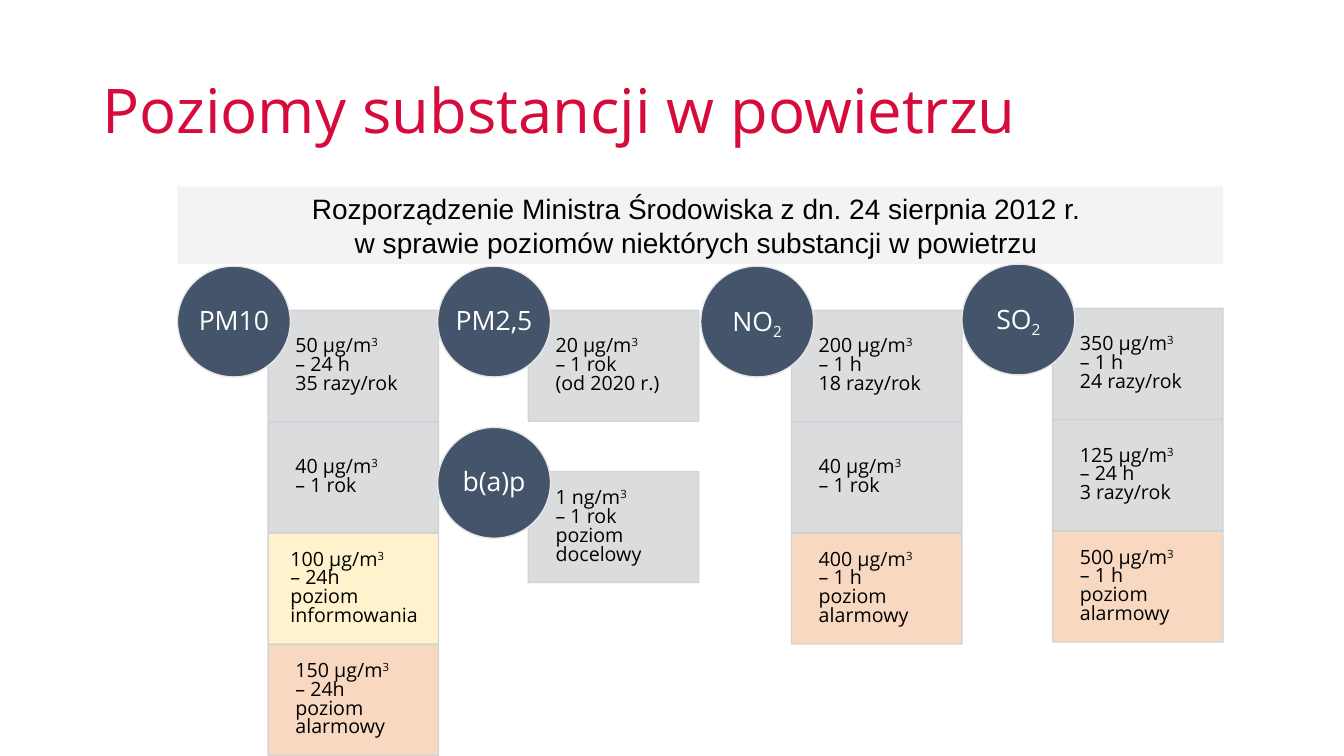
from copy import deepcopy
from dataclasses import dataclass

from lxml.etree import SubElement
from pptx import Presentation
from pptx.dml.color import RGBColor
from pptx.enum.shapes import MSO_SHAPE
from pptx.enum.text import MSO_ANCHOR, PP_ALIGN
from pptx.oxml.ns import qn
from pptx.util import Inches, Pt


@dataclass(frozen=True)
class Theme:
    heading_font: str = "Open Sans"
    banner_font: str = "Arial"
    title_size: int = 44
    banner_size: int = 20
    circle_size: int = 19
    cell_size: int = 14
    red: str = "D70B3B"
    black: str = "000000"
    white: str = "FFFFFF"
    banner: str = "D9D9D9"
    navy: str = "44546A"
    circle_edge: str = "E7E6E6"
    grey: str = "CFD1D4"
    yellow: str = "FFF2CC"
    orange: str = "F8CBAD"


THEME = Theme()
CELL_WIDTH, CELL_HEIGHT = 1.69, 1.1
CELL_PITCH = (7.5 - 3.08) / 4
CELL_OFFSET = (0.9, 0.44)  # from the circle's corner to the first cell
CIRCLE_WIDTH = 1.12


class SlideBuilder:
    def __init__(self, slide, theme):
        self.slide = slide
        self.theme = theme

    def add_shape(self, kind, box, fill, alpha=100, line=None, line_alpha=100):
        shape = self.slide.shapes.add_shape(kind, *map(Inches, box))
        shape.shadow.inherit = False
        shape.fill.solid()
        shape.fill.fore_color.rgb = RGBColor.from_string(fill)
        properties = shape._element.spPr
        self.set_alpha(properties, alpha)
        if line is None:
            shape.line.fill.background()
        else:
            shape.line.width = Pt(1)
            shape.line.color.rgb = RGBColor.from_string(line)
            self.set_alpha(properties.find(qn("a:ln")), line_alpha)
        return shape

    def set_alpha(self, parent, percent):
        if percent < 100:
            color = parent.find(qn("a:solidFill"))[0]
            SubElement(color, qn("a:alpha")).set("val", str(percent * 1000))

    def add_text(self, shape, lines, font, size, color, align=PP_ALIGN.LEFT,
                 spacing=1.0, margins=(0.1, 0.05, 0.1, 0.05)):
        """Each line is a list of (text, baseline percent) runs."""
        frame = shape.text_frame
        frame.word_wrap = True
        frame.vertical_anchor = MSO_ANCHOR.MIDDLE
        (frame.margin_left, frame.margin_top,
         frame.margin_right, frame.margin_bottom) = map(Inches, margins)
        paragraph = frame.paragraphs[0]
        paragraph.alignment = align
        paragraph.line_spacing = spacing
        run = None
        for line in lines:
            if run is not None:
                # The break keeps the type size of the run before it
                paragraph.add_line_break()
                paragraph._p[-1].append(deepcopy(run._r.rPr))
            for text, baseline in line:
                run = paragraph.add_run()
                run.text = text
                run.font.name = font
                run.font.size = Pt(size)
                run.font.color.rgb = RGBColor.from_string(color)
                if baseline:
                    run._r.rPr.set("baseline", str(baseline * 1000))

    def add_title(self, text):
        box = self.slide.shapes.add_textbox(
            Inches(0.92), Inches(0.4), Inches(11.5), Inches(1.45))
        self.add_text(box, [[(text, 0)]], self.theme.heading_font,
                      self.theme.title_size, self.theme.red, spacing=0.9)

    def add_banner(self, lines):
        shape = self.add_shape(MSO_SHAPE.RECTANGLE, (1.76, 1.85, 10.37, 0.77),
                               self.theme.banner, alpha=30)
        self.add_text(shape, [[(line, 0)] for line in lines],
                      self.theme.banner_font, self.theme.banner_size,
                      self.theme.black, PP_ALIGN.CENTER)

    def add_cell(self, left, top, fill, amount, *details):
        solid = fill == self.theme.yellow
        shape = self.add_shape(
            MSO_SHAPE.RECTANGLE, (left, top, CELL_WIDTH, CELL_HEIGHT), fill,
            100 if solid else 75, self.theme.grey, 90)
        lines = [[(amount, 0), ("3", 30)]] + [[(detail, 0)] for detail in details]
        indent = 0.22 if solid else 0.27
        self.add_text(shape, lines, self.theme.heading_font,
                      self.theme.cell_size, self.theme.black, spacing=0.8,
                      margins=(indent, 0.11, 0.11, 0.11))

    def add_circle(self, left, top, name, subscript):
        shape = self.add_shape(
            MSO_SHAPE.OVAL, (left, top, CIRCLE_WIDTH, CELL_HEIGHT),
            self.theme.navy, line=self.theme.circle_edge)
        runs = [(name, 0)] + ([(subscript, -25)] if subscript else [])
        self.add_text(shape, [runs], self.theme.heading_font,
                      self.theme.circle_size, self.theme.white,
                      PP_ALIGN.CENTER, 0.9, (0, 0, 0, 0))

    def add_substance(self, left, top, name, subscript, cells):
        for row, cell in enumerate(cells):
            self.add_cell(left + CELL_OFFSET[0],
                          top + CELL_OFFSET[1] + row * CELL_PITCH, *cell)
        self.add_circle(left, top, name, subscript)


# Circle position, name, subscript, then the limit cells from top to bottom
SUBSTANCES = [
    (1.76, 2.64, "PM10", "", [
        (THEME.grey, "50 µg/m", "– 24 h", "35 razy/rok"),
        (THEME.grey, "40 µg/m", "– 1 rok"),
        (THEME.yellow, "100 µg/m", "– 24h", "poziom informowania"),
        (THEME.orange, "150 µg/m", "– 24h", "poziom alarmowy")]),
    (4.34, 2.64, "PM2,5", "", [
        (THEME.grey, "20 µg/m", "– 1 rok", "(od 2020 r.)")]),
    (4.34, 4.24, "b(a)p", "", [
        (THEME.grey, "1 ng/m", "– 1 rok", "poziom docelowy")]),
    (6.95, 2.64, "NO", "2", [
        (THEME.grey, "200 µg/m", "– 1 h", "18 razy/rok"),
        (THEME.grey, "40 µg/m", "– 1 rok"),
        (THEME.orange, "400 µg/m", "– 1 h", "poziom alarmowy")]),
    (9.54, 2.62, "SO", "2", [
        (THEME.grey, "350 µg/m", "– 1 h", "24 razy/rok"),
        (THEME.grey, "125 µg/m", "– 24 h", "3 razy/rok"),
        (THEME.orange, "500 µg/m", "– 1 h", "poziom alarmowy")]),
]


def main():
    presentation = Presentation()
    presentation.slide_width = Inches(13.33)
    presentation.slide_height = Inches(7.5)
    slide = presentation.slides.add_slide(presentation.slide_layouts[6])
    builder = SlideBuilder(slide, THEME)

    # Title and legal basis
    builder.add_title("Poziomy substancji w powietrzu")
    builder.add_banner([
        "Rozporządzenie Ministra Środowiska z dn. 24 sierpnia 2012 r. ",
        "w sprawie poziomów niektórych substancji w powietrzu "])

    # Limits for each substance
    for substance in SUBSTANCES:
        builder.add_substance(*substance)

    presentation.save("out.pptx")


if __name__ == "__main__":
    main()
